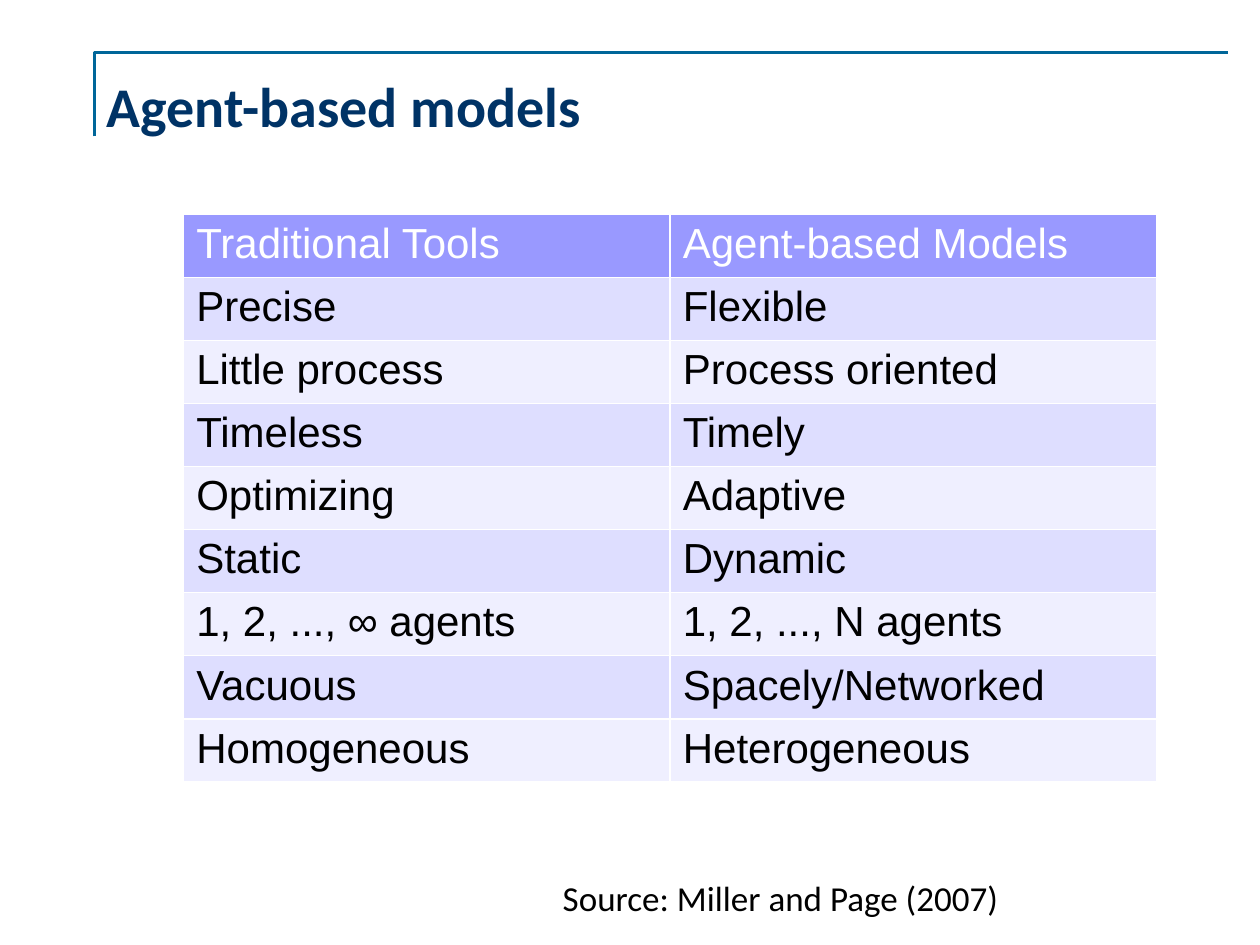
from lxml.etree import SubElement
from pptx import Presentation
from pptx.dml.color import RGBColor
from pptx.enum.text import MSO_ANCHOR as Anchor, PP_ALIGN as Align
from pptx.oxml.ns import qn
from pptx.util import Pt

WHITE = RGBColor(0xFF, 0xFF, 0xFF)
BLACK = RGBColor(0, 0, 0)
NAVY = RGBColor(0x00, 0x33, 0x66)
TEAL = RGBColor(0x00, 0x66, 0x99)
HEADER_FILL = RGBColor(0x99, 0x99, 0xFF)
BAND_FILLS = (RGBColor(0xEF, 0xEF, 0xFF), RGBColor(0xDE, 0xDE, 0xFF))

COMPARISON = [
    ("Traditional Tools", "Agent-based Models"),
    ("Precise", "Flexible"),
    ("Little process", "Process oriented"),
    ("Timeless", "Timely"),
    ("Optimizing", "Adaptive"),
    ("Static", "Dynamic"),
    ("1, 2, ..., ∞ agents", "1, 2, ..., N agents"),
    ("Vacuous", "Spacely/Networked"),
    ("Homogeneous", "Heterogeneous"),
]


def style_font(paragraph, name, size, color, bold=False):
    font = paragraph.font
    font.name, font.size, font.bold = name, Pt(size), bold
    font.color.rgb = color


def add_text(slide, text, left, top, width, height, size, color, bold=False,
             anchor=Anchor.TOP, align=Align.LEFT):
    frame = slide.shapes.add_textbox(
        Pt(left), Pt(top), Pt(width), Pt(height)).text_frame
    frame.word_wrap = True
    frame.vertical_anchor = anchor
    paragraph = frame.paragraphs[0]
    paragraph.text = text
    paragraph.alignment = align
    style_font(paragraph, "Calibri", size, color, bold)


def add_heading(slide, left, top, width, height):
    """Title inside a corner rule that runs down the left and along the top."""
    builder = slide.shapes.build_freeform(Pt(left), Pt(top + 48))
    builder.add_line_segments(
        [(Pt(left), Pt(top)), (Pt(left + width), Pt(top))], close=False)
    corner = builder.convert_to_shape()
    corner.shadow.inherit = False
    corner.fill.background()
    corner.line.color.rgb = TEAL
    corner.line.width = Pt(1.5)
    add_text(slide, "Agent-based models", left, top, width - 6, height,
             32, NAVY, bold=True, anchor=Anchor.MIDDLE)


def add_cell_borders(cell, color, width):
    properties = cell._tc.get_or_add_tcPr()
    for side in ("a:lnL", "a:lnR", "a:lnT", "a:lnB"):
        border = SubElement(properties, qn(side), w=str(Pt(width)))
        fill = SubElement(border, qn("a:solidFill"))
        SubElement(fill, qn("a:srgbClr"), val=str(color))


def add_comparison(slide, left, top, width, height):
    table = slide.shapes.add_table(
        len(COMPARISON), len(COMPARISON[0]),
        Pt(left), Pt(top), Pt(width), Pt(height)).table
    for r, entries in enumerate(COMPARISON):
        table.rows[r].height = Pt(height / len(COMPARISON))
        for c, entry in enumerate(entries):
            cell = table.cell(r, c)
            add_cell_borders(cell, WHITE, 1)
            cell.fill.solid()
            cell.fill.fore_color.rgb = BAND_FILLS[r % 2] if r else HEADER_FILL
            cell.text = entry
            style_font(cell.text_frame.paragraphs[0], "Arial", 24,
                       BLACK if r else WHITE)


def add_source(slide, left, top, width, height):
    add_text(slide, "Source: Miller and Page (2007)", left, top, width, height,
             20, BLACK, align=Align.JUSTIFY)


def main():
    deck = Presentation()
    deck.slide_width, deck.slide_height = Pt(720), Pt(540)
    slide = deck.slides.add_slide(deck.slide_layouts[6])
    add_heading(slide, 54, 30, 648, 60)
    add_comparison(slide, 105, 122.5, 556, 324)
    add_source(slide, 314.5, 497.5, 405, 39.5)
    deck.save("out.pptx")


if __name__ == "__main__":
    main()
